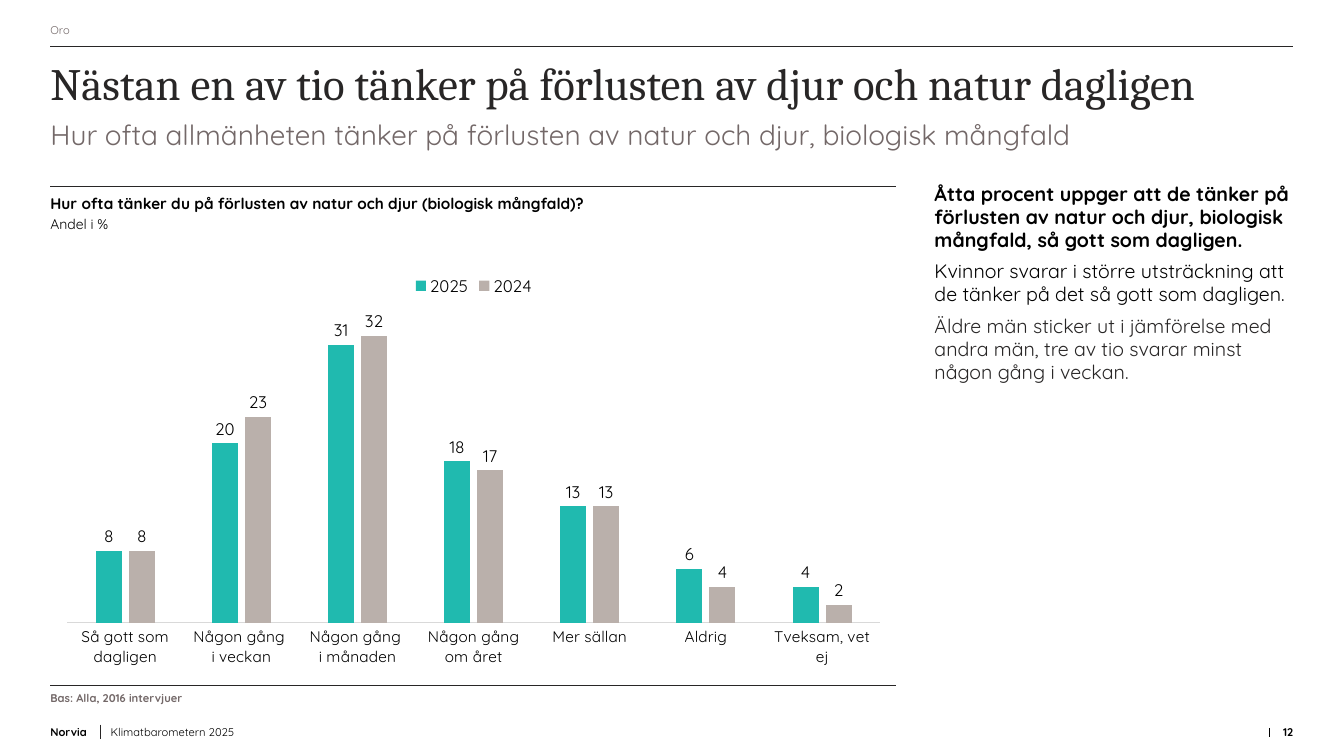
from lxml.etree import SubElement
from pptx import Presentation
from pptx.chart.data import CategoryChartData
from pptx.dml.color import RGBColor
from pptx.enum.chart import XL_CHART_TYPE, XL_LABEL_POSITION, XL_LEGEND_POSITION, XL_TICK_MARK
from pptx.enum.shapes import MSO_CONNECTOR
from pptx.enum.text import MSO_ANCHOR, MSO_AUTO_SIZE, PP_ALIGN
from pptx.oxml import parse_xml
from pptx.oxml.ns import nsdecls, qn
from pptx.util import Cm, Pt

COLOURS = {
    "ink": "282626",
    "black": "000000",
    "muted": "736868",
    "teal": "20BAAF",
    "taupe": "BAB0AB",
    "axis": "D9D9D9",
}
SERIF = "Cambria"
SANS = "Quicksand"
LEFT = 1.27
RIGHT = 32.59
FULL_WIDTH = 31.29
CHART_RIGHT = 22.58
FOOTER_TOP = 18.19
FOOTER_HEIGHT = 0.43


class SlideBuilder:
    def __init__(self, page):
        self.page = page

    def colour(self, name):
        return RGBColor.from_string(COLOURS[name])

    def style_font(self, font, size, colour="black", bold=False, name=SANS):
        font.name = name
        font.size = Pt(size)
        font.bold = bold
        font.color.rgb = self.colour(colour)

    def format_frame(self, frame, anchor):
        frame.word_wrap = True
        frame.auto_size = MSO_AUTO_SIZE.NONE
        frame.vertical_anchor = anchor
        frame.margin_left = frame.margin_right = 0
        frame.margin_top = frame.margin_bottom = 0

    def format_paragraph(self, para, align=PP_ALIGN.LEFT, after=0):
        para.alignment = align
        para.space_before = Pt(0)
        para.space_after = Pt(after)

    def placeholder(self, index, bounds, entries, anchor=MSO_ANCHOR.TOP, name=SANS, spacing=1.0, after=0):
        box = self.page.placeholders[index]
        box.left, box.top, box.width, box.height = map(Cm, bounds)
        frame = box.text_frame
        self.format_frame(frame, anchor)
        frame.text = "\n".join(entry[0] for entry in entries)
        for para, (_, size, colour, bold) in zip(frame.paragraphs, entries):
            self.format_paragraph(para, after=after)
            para.line_spacing = spacing
            properties = para._p.get_or_add_pPr()
            properties.set("marL", "0")
            properties.set("indent", "0")
            SubElement(properties, qn("a:buNone"))
            for span in para.runs:
                self.style_font(span.font, size, colour, bold, name)

    def text(self, bounds, content, size, colour="black", bold=False,
             anchor=MSO_ANCHOR.TOP, align=PP_ALIGN.LEFT):
        box = self.page.shapes.add_textbox(*map(Cm, bounds))
        self.format_frame(box.text_frame, anchor)
        para = box.text_frame.paragraphs[0]
        para.text = content
        self.format_paragraph(para, align)
        self.style_font(para.runs[0].font, size, colour, bold)

    def line(self, start, end, colour="ink"):
        connector = self.page.shapes.add_connector(MSO_CONNECTOR.STRAIGHT, *map(Cm, start + end))
        connector.line.color.rgb = self.colour(colour)
        connector.line.width = Pt(0.5)
        SubElement(connector._element.spPr, qn("a:effectLst"))

    def column_chart(self, bounds, categories, series_list, plot_bounds):
        data = CategoryChartData(number_format="0")
        data.categories = categories
        for label, values, _ in series_list:
            data.add_series(label, values)
        frame = self.page.shapes.add_chart(XL_CHART_TYPE.COLUMN_CLUSTERED, *map(Cm, bounds), data)
        chart = frame.chart
        chart.has_title = False
        self.style_font(chart.font, 10)
        chart.has_legend = True
        chart.legend.position = XL_LEGEND_POSITION.TOP
        chart.legend.include_in_layout = False
        self.style_font(chart.legend.font, 12)

        axis = chart.category_axis
        axis.major_tick_mark = axis.minor_tick_mark = XL_TICK_MARK.NONE
        axis.format.line.color.rgb = self.colour("axis")
        axis.format.line.width = Pt(0.75)
        self.style_font(axis.tick_labels.font, 11)
        scale = chart.value_axis
        scale.visible = False
        scale.has_major_gridlines = False
        scale.minimum_scale = 0
        scale.maximum_scale = 35

        plot = chart.plots[0]
        plot.gap_width = 219
        plot.overlap = -27
        plot.vary_by_categories = False
        for series, (_, _, colour) in zip(plot.series, series_list):
            series.format.fill.solid()
            series.format.fill.fore_color.rgb = self.colour(colour)
            labels = series.data_labels
            labels.show_value = True
            labels.position = XL_LABEL_POSITION.OUTSIDE_END
            self.style_font(labels.font, 12)
        self.place_plot(chart, plot_bounds)

    def place_plot(self, chart, plot_bounds):
        area = chart._chartSpace.find(".//" + qn("c:plotArea"))
        for layout in area.findall(qn("c:layout")):
            area.remove(layout)
        sizes = "".join(f'<c:{key} val="{value}"/>' for key, value in zip("xywh", plot_bounds))
        area.insert(0, parse_xml(
            f'<c:layout {nsdecls("c")}><c:manualLayout><c:layoutTarget val="inner"/>'
            f'<c:xMode val="edge"/><c:yMode val="edge"/>{sizes}</c:manualLayout></c:layout>'
        ))


def main():
    deck = Presentation()
    deck.slide_width = Cm(33.87)
    deck.slide_height = Cm(19.05)
    builder = SlideBuilder(deck.slides.add_slide(deck.slide_layouts[3]))

    builder.text((LEFT, 0.48, FULL_WIDTH, 0.53), "Oro", 8, "muted", anchor=MSO_ANCHOR.MIDDLE)
    builder.line((LEFT, 1.17), (RIGHT, 1.17))
    builder.placeholder(
        0, (LEFT, 1.17, FULL_WIDTH, 1.8),
        [("Nästan en av tio tänker på förlusten av djur och natur dagligen", 32, "ink", False)],
        anchor=MSO_ANCHOR.MIDDLE, name=SERIF,
    )
    builder.placeholder(
        1, (LEFT, 2.95, FULL_WIDTH, 1.17),
        [("Hur ofta allmänheten tänker på förlusten av natur och djur, biologisk mångfald", 20, "muted", False)],
    )
    builder.placeholder(
        2, (23.55, 4.6, 9.04, 13.21),
        [
            ("Åtta procent uppger att de tänker på förlusten av natur och djur, biologisk mångfald, "
             "så gott som dagligen.", 14, "black", True),
            ("Kvinnor svarar i större utsträckning att de tänker på det så gott som dagligen.",
             14, "black", False),
            ("Äldre män sticker ut i jämförelse med andra män, tre av tio svarar minst "
             "någon gång i veckan.", 14, "ink", False),
        ],
        spacing=0.98, after=6,
    )

    for top in (4.7, 17.27):
        builder.line((LEFT, top), (CHART_RIGHT, top))
    builder.text((LEFT, 4.9, 18.03, 0.53),
                 "Hur ofta tänker du på förlusten av natur och djur (biologisk mångfald)?", 11, bold=True)
    builder.text((LEFT, 5.44, 13.16, 0.38), "Andel i %", 10)
    builder.column_chart(
        (LEFT, 6.65, 21.34, 10.34),
        ["Så gott som dagligen", "Någon gång \ni veckan", "Någon gång \ni månaden",
         "Någon gång om året", "Mer sällan", "Aldrig", "Tveksam, vet ej"],
        [("2025", (8, 20, 31, 18, 13, 6, 4), "teal"),
         ("2024", (8, 23, 32, 17, 13, 4, 2), "taupe")],
        (0.02, 0.11, 0.96, 0.765),
    )
    builder.text((LEFT, 17.42, 20.68, 0.38), "Bas: Alla, 2016 intervjuer", 8, "muted", bold=True)

    footers = [
        (LEFT, 1.27, "Norvia", True, PP_ALIGN.LEFT),
        (2.79, 19.81, "Klimatbarometern 2025", False, PP_ALIGN.LEFT),
        (31.98, 0.61, "12", True, PP_ALIGN.RIGHT),
    ]
    for left, width, content, bold, align in footers:
        builder.text((left, FOOTER_TOP, width, FOOTER_HEIGHT), content, 8,
                     bold=bold, anchor=MSO_ANCHOR.BOTTOM, align=align)
    builder.line((2.54, 18.26), (2.54, 18.62))
    builder.line((31.98, 18.34), (31.98, 18.57), "black")
    deck.save("out.pptx")


if __name__ == "__main__":
    main()
